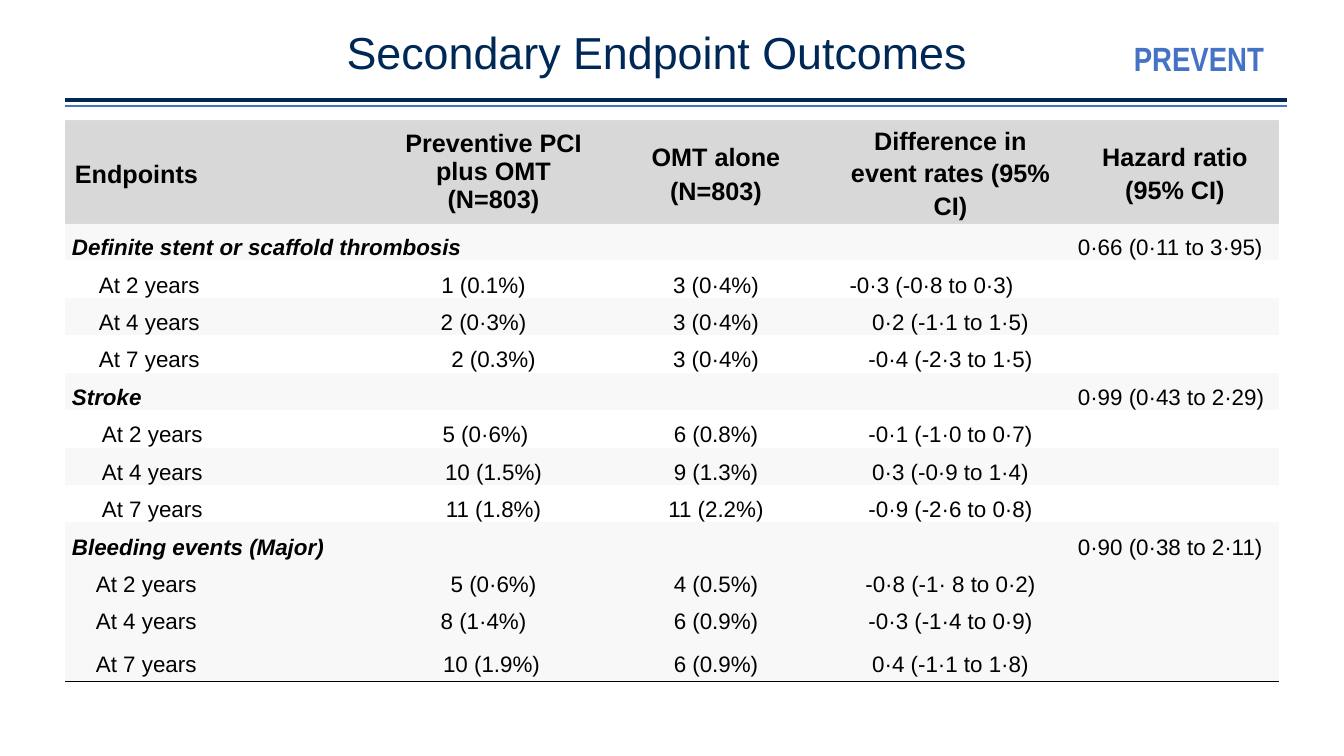
from dataclasses import dataclass
from lxml.etree import SubElement
from pptx import Presentation
from pptx.dml.color import RGBColor
from pptx.enum.shapes import MSO_CONNECTOR
from pptx.enum.text import MSO_ANCHOR, MSO_AUTO_SIZE, PP_ALIGN
from pptx.oxml import parse_xml
from pptx.oxml.ns import nsdecls, qn
from pptx.util import Pt

TITLE = "Secondary Endpoint Outcomes"
TRIAL = "PREVENT"
HEADS = [
    ("Endpoints", 1.2),
    ("Preventive PCI\nplus OMT\n(N=803)", 1.0),
    ("OMT alone\v(N=803)", 1.2),
    ("Difference in\nevent rates (95% CI)", 1.15),
    ("Hazard ratio\n(95% CI)", 1.15),
]
GROUPS = [
    ("Definite stent or scaffold thrombosis", "0·66 (0·11 to 3·95)", 3, 27, [
        ("At 2 years", "1 (0.1%)", "3 (0·4%)", "-0·3 (-0·8 to 0·3)"),
        ("At 4 years", "2 (0·3%)", "3 (0·4%)", "0·2 (-1·1 to 1·5)"),
        ("At 7 years", "2 (0.3%)", "3 (0·4%)", "-0·4 (-2·3 to 1·5)")]),
    ("Stroke", "0·99 (0·43 to 2·29)", 2, 30, [
        ("At 2 years", "5 (0·6%)", "6 (0.8%)", "-0·1 (-1·0 to 0·7)"),
        ("At 4 years", "10 (1.5%)", "9 (1.3%)", "0·3 (-0·9 to 1·4)"),
        ("At 7 years", "11 (1.8%)", "11 (2.2%)", "-0·9 (-2·6 to 0·8)")]),
    ("Bleeding events (Major)", "0·90 (0·38 to 2·11)", 4, 24, [
        ("At 2 years", "5 (0·6%)", "4 (0.5%)", "-0·8 (-1· 8 to 0·2)"),
        ("At 4 years", "8 (1·4%)", "6 (0.9%)", "-0·3 (-1·4 to 0·9)"),
        ("At 7 years", "10 (1.9%)", "6 (0.9%)", "0·4 (-1·1 to 1·8)")]),
]
SHIFTS = {(2, 1): 10, (2, 3): 19, (3, 1): 10, (6, 1): 8, (11, 1): 10, (12, 1): 2}
WIDTHS = [320, 217, 228, 241, 208]
RULES = [(100, "navy", 2.25), (106, "blue", 1)]
NO_STYLE = "{2D5ABB26-0587-4C30-8999-92F81FD0307C}"


@dataclass(frozen=True)
class Theme:
    navy: str = "002856"
    blue: str = "4472C4"
    black: str = "000000"
    head: str = "D8D8D8"
    band: str = "F8F8F8"
    edge: str = "DADADA"
    sans: str = "Arial"
    slim: str = "Arial Narrow"
    title: int = 32
    tag: int = 24
    label: int = 18
    body: int = 16


THEME = Theme()


def px(n):
    return round(n * 914400 / 100.8)


def rgb(code):
    return RGBColor.from_string(code)


def style(frame, size, color, face=THEME.sans, bold=False, italic=False,
          align=PP_ALIGN.LEFT, lead=1.0):
    for para in frame.paragraphs:
        para.alignment = align
        para.line_spacing = lead
        for run in para.runs:
            font = run.font
            font.size, font.name = Pt(size), face
            font.bold, font.italic = bold, italic
            font.color.rgb = rgb(color)


def border(cell, side, color):
    line = parse_xml(f'<a:{side} {nsdecls("a")} w="{Pt(1)}"/>')
    fill = SubElement(line, qn("a:solidFill"))
    SubElement(fill, qn("a:srgbClr"), val=color)
    cell._tc.get_or_add_tcPr().insert(0, line)


def paint(cell, color, pad):
    cell.margin_left = cell.margin_right = px(pad)
    cell.margin_top = cell.margin_bottom = 0
    cell.vertical_anchor = MSO_ANCHOR.MIDDLE
    if color:
        cell.fill.solid()
        cell.fill.fore_color.rgb = rgb(color)
    else:
        cell.fill.background()


def write(cell, text, **look):
    cell.text_frame.text = text
    style(cell.text_frame, THEME.body, THEME.black, lead=1.5, **look)


def add_title(slide):
    title = slide.shapes.title
    title.left, title.top, title.width, title.height = map(px, (65, 26, 1184, 80))
    frame = title.text_frame
    frame.text = TITLE
    frame.auto_size = MSO_AUTO_SIZE.NONE
    frame.vertical_anchor = MSO_ANCHOR.TOP
    style(frame, THEME.title, THEME.navy, align=PP_ALIGN.CENTER, lead=0.9)


def add_tag(slide):
    frame = slide.shapes.add_textbox(*map(px, (1124, 33, 185, 50))).text_frame
    frame.word_wrap = True
    frame.text = TRIAL
    style(frame, THEME.tag, THEME.blue, THEME.slim, bold=True)


def add_rules(slide):
    for y, color, weight in RULES:
        rule = slide.shapes.add_connector(
            MSO_CONNECTOR.STRAIGHT, px(65), px(y), px(1287), px(y))
        rule.line.color.rgb = rgb(getattr(THEME, color))
        rule.line.width = Pt(weight)
        SubElement(rule._element.spPr, qn("a:effectLst"))


def add_grid(slide):
    count = 1 + sum(1 + len(group[-1]) for group in GROUPS)
    grid = slide.shapes.add_table(
        count, len(WIDTHS), px(65), px(121), px(sum(WIDTHS)), px(561)).table
    grid.first_row = grid.horz_banding = False
    grid._tbl.tblPr.find(qn("a:tableStyleId")).text = NO_STYLE
    for col, width in zip(grid.columns, WIDTHS):
        col.width = px(width)
    for row in grid.rows:
        row.height = px(412) // (count - 2)
    grid.rows[0].height = px(102)
    grid.rows[count - 1].height = px(47)

    last = count - len(GROUPS[-1][-1]) - 1
    for r in range(count):
        shade = THEME.band if r % 2 or r >= last else None
        for c in range(len(WIDTHS)):
            pad = 10 if r == 0 and c < 3 else 7
            paint(grid.cell(r, c), shade if r else THEME.head, pad)

    for c, (text, lead) in enumerate(HEADS):
        cell = grid.cell(0, c)
        cell.text_frame.text = text
        style(cell.text_frame, THEME.label, THEME.black, bold=True, lead=lead,
              align=PP_ALIGN.CENTER if c else PP_ALIGN.LEFT)
        border(cell, "lnB", THEME.edge)
        border(cell, "lnT", THEME.edge)
        border(grid.cell(count - 1, c), "lnB", THEME.black)

    r = 1
    for name, ratio, span, dent, years in GROUPS:
        grid.cell(r, 0).merge(grid.cell(r, span - 1))
        write(grid.cell(r, 0), name, bold=True, italic=True)
        write(grid.cell(r, 4), ratio)
        for r, year in enumerate(years, r + 1):
            for c, text in enumerate(year):
                cell = grid.cell(r, c)
                write(cell, text, align=PP_ALIGN.CENTER if c else PP_ALIGN.LEFT)
                cell.margin_right = px(7 + 2 * SHIFTS.get((r, c), 0))
            grid.cell(r, 0).margin_left = px(7 + dent)
        r += 1


def main():
    deck = Presentation()
    deck.slide_width, deck.slide_height = px(1344), px(756)
    slide = deck.slides.add_slide(deck.slide_layouts[5])
    add_grid(slide)
    add_title(slide)
    add_tag(slide)
    add_rules(slide)
    deck.save("out.pptx")


if __name__ == "__main__":
    main()
